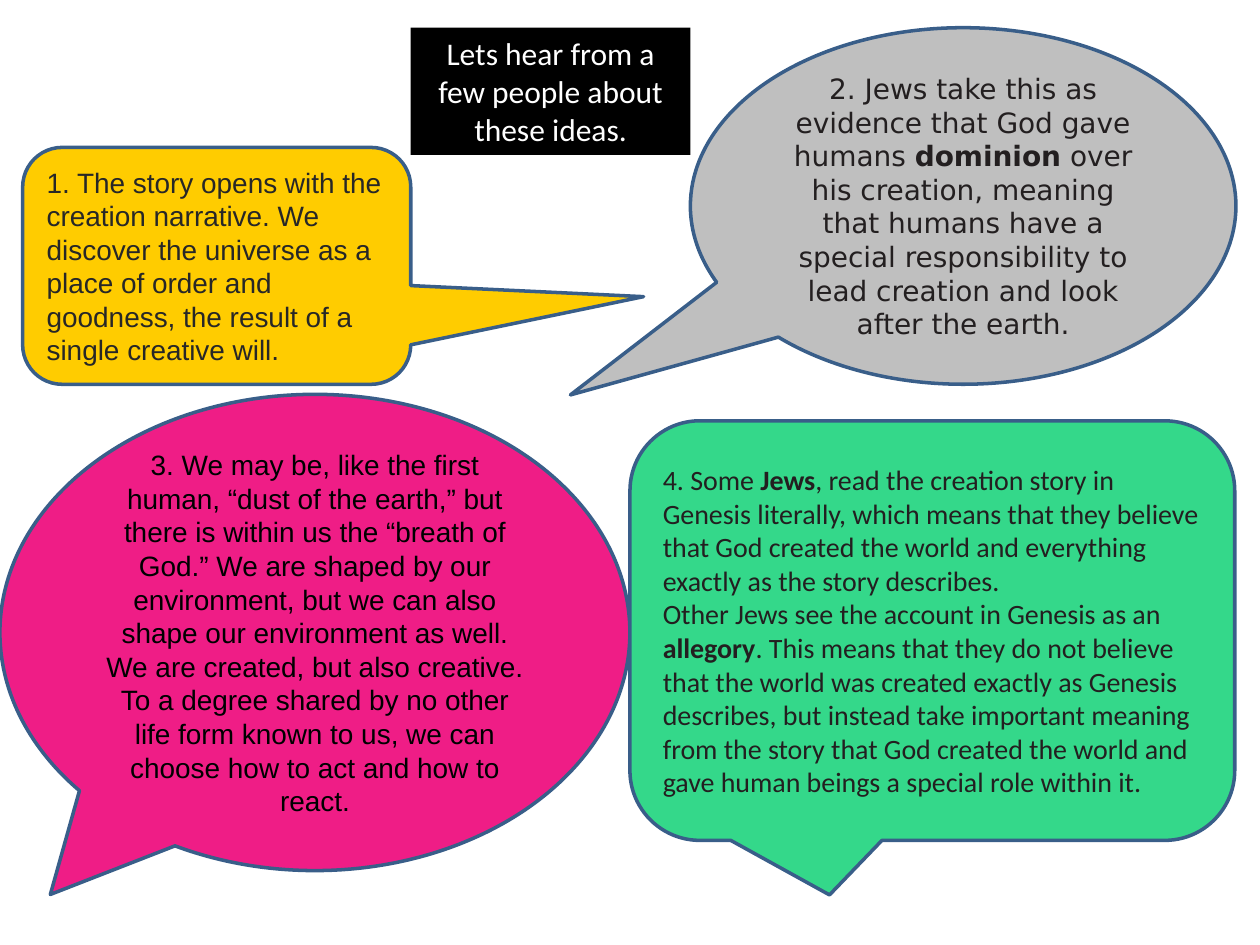
from dataclasses import dataclass

from pptx import Presentation
from pptx.dml.color import RGBColor
from pptx.enum.shapes import MSO_SHAPE
from pptx.enum.text import MSO_ANCHOR, MSO_AUTO_SIZE, PP_ALIGN
from pptx.util import Inches, Pt


@dataclass(frozen=True)
class Theme:
    outline: str = "395E89"
    grey: str = "BFBFBF"
    yellow: str = "FFCC00"
    pink: str = "EF1D86"
    green: str = "34D88A"
    black: str = "000000"
    white: str = "FFFFFF"
    ink: str = "231F20"
    charcoal: str = "272727"
    sans: str = "Arial"
    wide: str = "DejaVu Sans"
    heading: str = "Calibri"
    heading_size: int = 18
    speech_size: int = 16
    outline_width: int = 2


class SpeechSlide:
    def __init__(self, slide, theme):
        self.slide = slide
        self.theme = theme

    def set_wording(self, frame, paragraphs, font, size, color, align):
        frame.word_wrap = True
        for index, wording in enumerate(paragraphs):
            paragraph = frame.add_paragraph() if index else frame.paragraphs[0]
            paragraph.alignment = align
            paragraph.font.name = font
            paragraph.font.size = Pt(size)
            paragraph.font.color.rgb = RGBColor.from_string(color)
            for position, part in enumerate(wording.split("**")):
                run = paragraph.add_run()
                run.text = part
                if position % 2:
                    run.font.bold = True

    def heading(self, box, wording):
        banner = self.slide.shapes.add_textbox(*map(Inches, box))
        banner.fill.solid()
        banner.fill.fore_color.rgb = RGBColor.from_string(self.theme.black)
        self.set_wording(banner.text_frame, [wording], self.theme.heading,
                         self.theme.heading_size, self.theme.white,
                         PP_ALIGN.CENTER)
        banner.text_frame.auto_size = MSO_AUTO_SIZE.SHAPE_TO_FIT_TEXT

    def callout(self, outline, box, tail, fill, paragraphs, font, color, align):
        bubble = self.slide.shapes.add_shape(outline, *map(Inches, box))
        bubble.shadow.inherit = False
        for index, value in enumerate(tail):
            bubble.adjustments[index] = value
        bubble.fill.solid()
        bubble.fill.fore_color.rgb = RGBColor.from_string(fill)
        bubble.line.color.rgb = RGBColor.from_string(self.theme.outline)
        bubble.line.width = Pt(self.theme.outline_width)
        bubble.text_frame.vertical_anchor = MSO_ANCHOR.MIDDLE
        self.set_wording(bubble.text_frame, paragraphs, font,
                         self.theme.speech_size, color, align)

    def oval_speech(self, box, tail, fill, paragraphs, font, color):
        self.callout(MSO_SHAPE.OVAL_CALLOUT, box, tail, fill, paragraphs,
                     font, color, PP_ALIGN.CENTER)

    def rounded_speech(self, box, tail, fill, paragraphs, font, color):
        self.callout(MSO_SHAPE.ROUNDED_RECTANGULAR_CALLOUT, box, tail, fill,
                     paragraphs, font, color, PP_ALIGN.LEFT)


def main():
    presentation = Presentation()
    presentation.slide_width = Inches(10)
    presentation.slide_height = Inches(7.5)
    theme = Theme()
    speeches = SpeechSlide(
        presentation.slides.add_slide(presentation.slide_layouts[6]), theme)

    speeches.oval_speech(
        (5.48, 0.22, 4.33, 2.83), (-0.72, 0.53), theme.grey,
        ["2. Jews take this as evidence that God gave humans **dominion** over "
         "his creation, meaning that humans have a special responsibility to "
         "lead creation and look after the earth."],
        theme.wide, theme.ink)
    speeches.rounded_speech(
        (0.18, 1.17, 3.08, 1.88), (1.1, 0.13), theme.yellow,
        ["1. The story opens with the creation narrative. We discover the "
         "universe as a place of order and goodness, the result of a single "
         "creative will."],
        theme.sans, theme.charcoal)
    speeches.oval_speech(
        (0, 3.13, 5, 3.78), (-0.42, 0.55), theme.pink,
        ["3. We may be, like the first human, “dust of the earth,” but there "
         "is within us the “breath of God.” We are shaped by our environment, "
         "but we can also shape our environment as well. We are created, but "
         "also creative. To a degree shared by no other life form known to "
         "us, we can choose how to act and how to react."],
        theme.sans, theme.black)
    speeches.rounded_speech(
        (5, 3.34, 4.8, 3.33), (-0.17, 0.63), theme.green,
        ["4. Some **Jews**, read the creation story in Genesis literally, "
         "which means that they believe that God created the world and "
         "everything exactly as the story describes.",
         "Other Jews see the account in Genesis as an **allegory**. This means "
         "that they do not believe that the world was created exactly as "
         "Genesis describes, but instead take important meaning from the "
         "story that God created the world and gave human beings a special "
         "role within it."],
        theme.heading, theme.ink)
    speeches.heading((3.26, 0.22, 2.22, 1.01),
                     "Lets hear from a few people about these ideas.")

    presentation.save("out.pptx")


if __name__ == "__main__":
    main()
